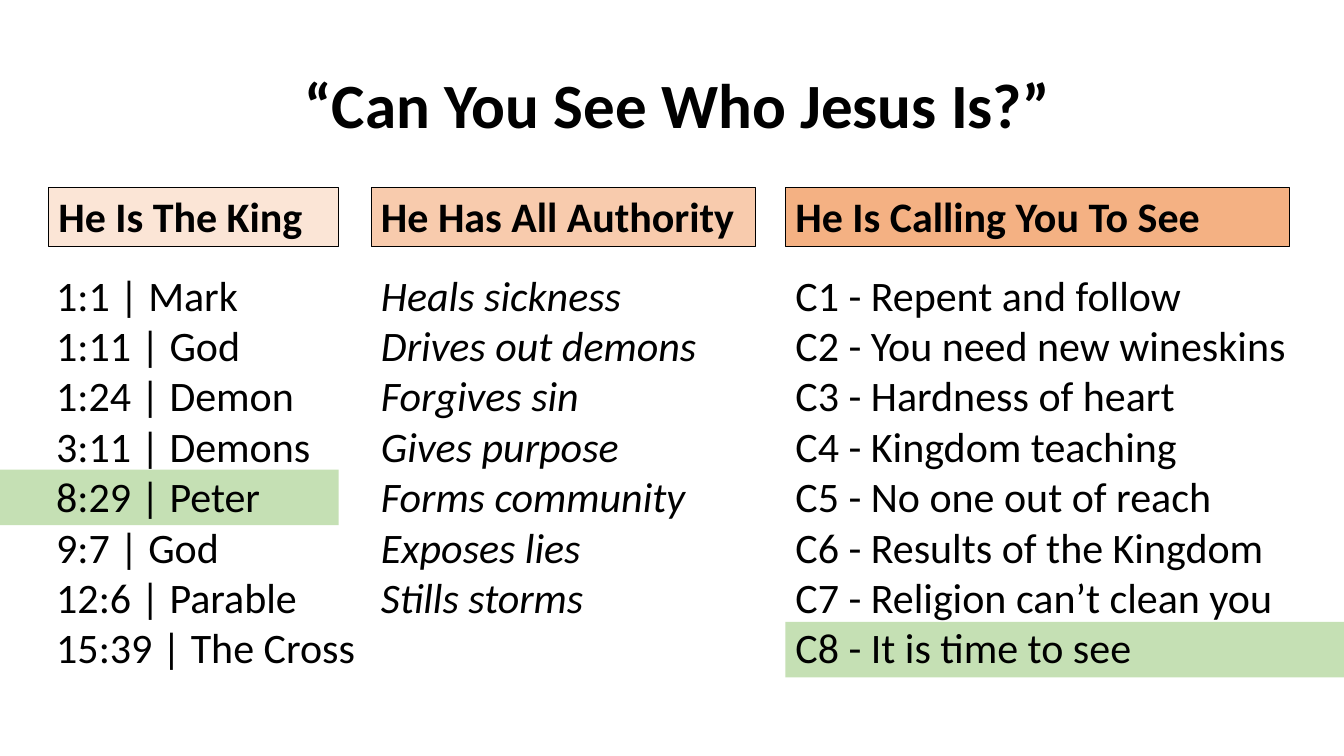
from dataclasses import dataclass

from pptx import Presentation
from pptx.dml.color import RGBColor
from pptx.enum.shapes import MSO_SHAPE
from pptx.enum.text import MSO_ANCHOR, PP_ALIGN
from pptx.util import Inches, Pt

RECTANGLE = MSO_SHAPE.RECTANGLE
TOP, MIDDLE, BOTTOM = MSO_ANCHOR.TOP, MSO_ANCHOR.MIDDLE, MSO_ANCHOR.BOTTOM
LEFT, CENTER = PP_ALIGN.LEFT, PP_ALIGN.CENTER


@dataclass(frozen=True)
class Theme:
    font: str = "Calibri"
    ink: RGBColor = RGBColor(0x00, 0x00, 0x00)
    highlight: RGBColor = RGBColor(0xC5, 0xE0, 0xB4)
    king: RGBColor = RGBColor(0xFB, 0xE5, 0xD6)
    authority: RGBColor = RGBColor(0xF8, 0xCB, 0xAD)
    calling: RGBColor = RGBColor(0xF4, 0xB1, 0x83)
    title_size: Pt = Pt(45)
    text_size: Pt = Pt(30)
    border: Pt = Pt(0.75)


THEME = Theme()
HEADER_TOP, HEADER_HEIGHT = 1.86, 0.59
LIST_TOP, LIST_HEIGHT = 2.62, 4.03
BAR_HEIGHT = 0.55

# Heading, heading fill, heading left and width, list left and width, italic, lines
COLUMNS = [
    ("He Is The King", THEME.king, 0.48, 2.88, 0.46, 3.67, False,
     ["1:1 | Mark", "1:11 | God", "1:24 | Demon", "3:11 | Demons",
      "8:29 | Peter", "9:7 | God", "12:6 | Parable", "15:39 | The Cross"]),
    ("He Has All Authority", THEME.authority, 3.68, 3.81, 3.68, 4.11, True,
     ["Heals sickness", "Drives out demons", "Forgives sin", "Gives purpose",
      "Forms community", "Exposes lies", "Stills storms"]),
    ("He Is Calling You To See", THEME.calling, 7.79, 5, 7.79, 5.21, False,
     ["C1 - Repent and follow", "C2 - You need new wineskins",
      "C3 - Hardness of heart", "C4 - Kingdom teaching",
      "C5 - No one out of reach", "C6 - Results of the Kingdom",
      "C7 - Religion can’t clean you", "C8 - It is time to see"]),
]

# Left, top and width of the bars behind the highlighted lines
HIGHLIGHTS = [(-0.38, 4.66, 3.74), (7.79, 6.17, 5.76)]


def write_lines(shape, lines, anchor, align=LEFT, spacing=1.0, **font_format):
    frame = shape.text_frame
    frame.word_wrap = True
    frame.vertical_anchor = anchor
    frame.text = "\n".join(lines)
    values = {"name": THEME.font, "size": THEME.text_size, **font_format}
    for paragraph in frame.paragraphs:
        paragraph.alignment = align
        paragraph.line_spacing = spacing
        for run in paragraph.runs:
            run.font.color.rgb = THEME.ink
            for attribute, value in values.items():
                setattr(run.font, attribute, value)


def add_box(slide, left, top, width, height, fill, bordered=False):
    box = slide.shapes.add_shape(
        RECTANGLE, Inches(left), Inches(top), Inches(width), Inches(height))
    box.shadow.inherit = False
    box.fill.solid()
    box.fill.fore_color.rgb = fill
    if bordered:
        box.line.color.rgb = THEME.ink
        box.line.width = THEME.border
    else:
        box.line.fill.background()
    return box


def add_text(slide, left, top, width, height, lines, anchor, **text_format):
    box = slide.shapes.add_textbox(
        Inches(left), Inches(top), Inches(width), Inches(height))
    write_lines(box, lines, anchor, **text_format)


def add_column(slide, heading, fill, head_left, head_width,
               list_left, list_width, italic, lines):
    header = add_box(slide, head_left, HEADER_TOP, head_width, HEADER_HEIGHT,
                     fill, bordered=True)
    write_lines(header, [heading], BOTTOM, spacing=0.9, bold=True)
    add_text(slide, list_left, LIST_TOP, list_width, LIST_HEIGHT, lines, TOP,
             italic=italic)


def main():
    presentation = Presentation()
    presentation.slide_width = Inches(13.33)
    presentation.slide_height = Inches(7.5)
    slide = presentation.slides.add_slide(presentation.slide_layouts[6])

    # Bars behind the highlighted lines
    for left, top, width in HIGHLIGHTS:
        add_box(slide, left, top, width, BAR_HEIGHT, THEME.highlight)

    # Title
    add_text(slide, 0.97, 0.71, 11.5, 0.72, ["“Can You See Who Jesus Is?”"],
             MIDDLE, align=CENTER, spacing=0.9, size=THEME.title_size, bold=True)

    # Three columns
    for column in COLUMNS:
        add_column(slide, *column)

    presentation.save("out.pptx")


if __name__ == "__main__":
    main()
